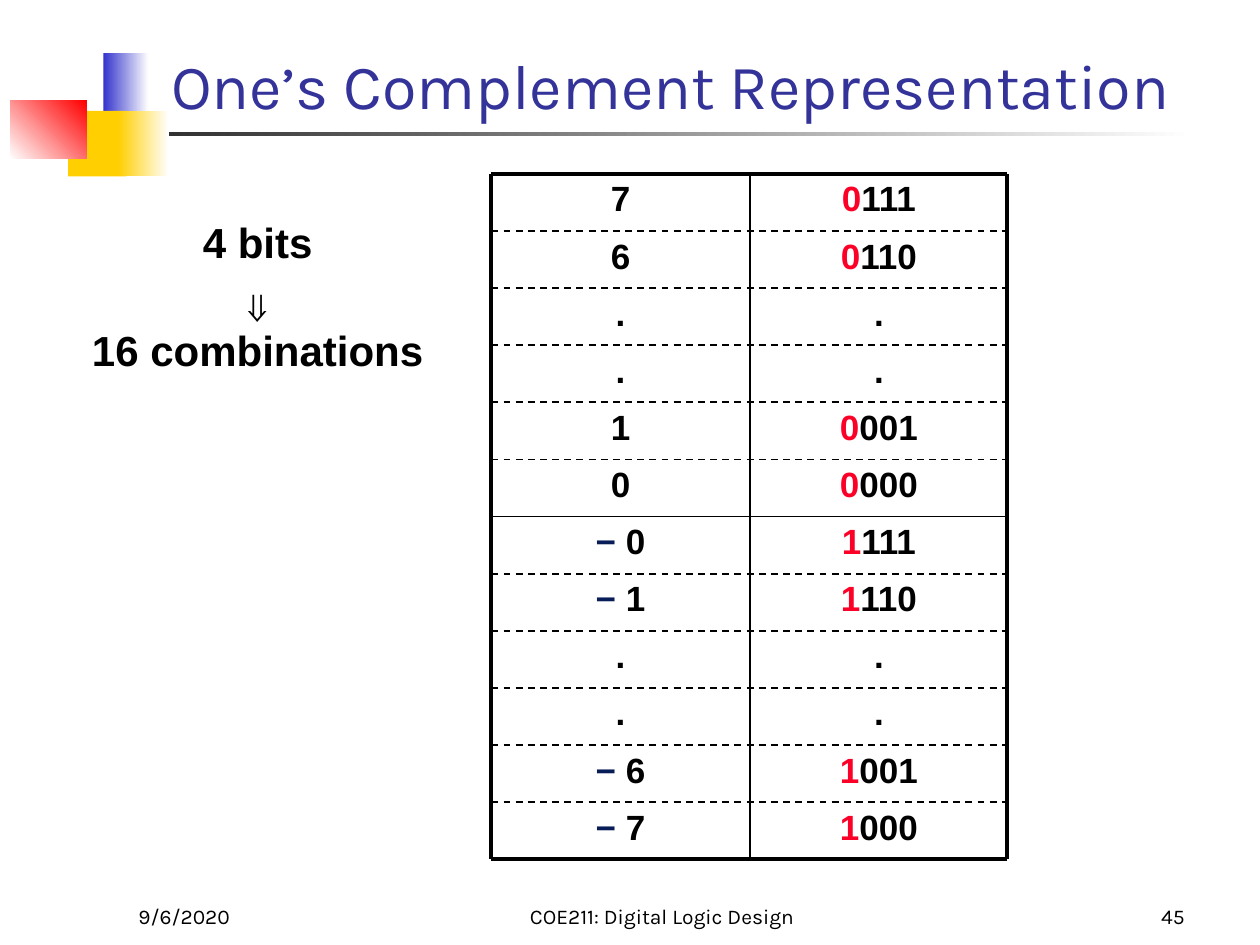
from dataclasses import dataclass

from lxml import etree
from pptx import Presentation
from pptx import util as u
from pptx.dml.color import RGBColor
from pptx.enum import dml, shapes, text
from pptx.oxml.ns import qn


@dataclass(frozen=True)
class Theme:
    heading: str = "Karla"
    body: str = "Arial"
    title_size: int = 36
    note_size: int = 24
    cell_size: int = 20
    footer_size: int = 12
    title: str = "333399"
    black: str = "000000"
    sign_bit: str = "FC0128"
    minus: str = "081D58"
    charcoal: str = "1C1C1C"
    blue: str = "3333CC"
    yellow: str = "FFCF01"
    red: str = "FF0000"
    white: str = "FFFFFF"


theme = Theme()
left, center, right = text.PP_ALIGN.LEFT, text.PP_ALIGN.CENTER, text.PP_ALIGN.RIGHT


def add_run(paragraph, words, font, size, color, bold=False):
    run = paragraph.add_run()
    run.text = words
    run.font.name = font
    run.font.size = u.Pt(size)
    run.font.bold = bold
    run.font.color.rgb = RGBColor.from_string(color)


def add_frame(slide, box, anchor):
    frame = slide.shapes.add_textbox(*map(u.Inches, box)).text_frame
    frame.word_wrap = True
    frame.vertical_anchor = anchor
    return frame


presentation = Presentation()
presentation.slide_width = u.Inches(10)
presentation.slide_height = u.Inches(7.5)
slide = presentation.slides.add_slide(presentation.slide_layouts[6])

decorations = [
    ((0.48, 1.05, 9, 0.03), theme.charcoal, theme.white, 0),
    ((0.82, 0.42, 0.36, 0.52), theme.blue, theme.white, 0),
    ((0.54, 0.88, 0.46, 0.52), theme.yellow, theme.yellow, 0),
    ((0.94, 0.88, 0.4, 0.52), theme.yellow, theme.white, 0),
    ((0.08, 0.8, 0.61, 0.46), theme.white, theme.red, 45),
]
for box, start, end, angle in decorations:
    shape = slide.shapes.add_shape(shapes.MSO_SHAPE.RECTANGLE, *map(u.Inches, box))
    shape.shadow.inherit = False
    shape.line.fill.background()
    if start == end:
        shape.fill.solid()
        shape.fill.fore_color.rgb = RGBColor.from_string(start)
    else:
        shape.fill.gradient()
        shape.fill.gradient_angle = angle
        for stop, color in zip(shape.fill.gradient_stops, (start, end)):
            stop.color.rgb = RGBColor.from_string(color)

labels = [
    ((1.26, 0.08, 8.52, 0.94), "One’s Complement Representation", left, theme.title_size, theme.title),
    ((1, 6.92, 2.08, 0.5), "9/6/2020", left, theme.footer_size, theme.black),
    ((3.67, 6.92, 3.17, 0.5), "COE211: Digital Logic Design", center, theme.footer_size, theme.black),
    ((7.42, 6.92, 2.08, 0.5), "45", right, theme.footer_size, theme.black),
]
for box, words, alignment, size, color in labels:
    paragraph = add_frame(slide, box, text.MSO_ANCHOR.BOTTOM).paragraphs[0]
    paragraph.alignment = alignment
    add_run(paragraph, words, theme.heading, size, color)

rows = [
    ("7", "0111"), ("6", "0110"), (".", "."), (".", "."), ("1", "0001"), ("0", "0000"),
    ("− 0", "1111"), ("− 1", "1110"), (".", "."), (".", "."), ("− 6", "1001"), ("− 7", "1000"),
]
grid_left, grid_middle, grid_right = 3.9, 5.95, 7.99
grid_top, grid_bottom = 1.38, 6.82
column_width = grid_middle - grid_left
row_height = (grid_bottom - grid_top) / len(rows)
sign_change = 6

for row, values in enumerate(rows):
    for column, value in enumerate(values):
        box = (grid_left + column * column_width, grid_top + row * row_height, column_width, row_height)
        paragraph = add_frame(slide, box, text.MSO_ANCHOR.MIDDLE).paragraphs[0]
        paragraph.alignment = center
        paragraph.line_spacing = 0.75
        lead = 1 if len(value) > 1 else 0
        if lead:
            color = theme.minus if column == 0 else theme.sign_bit
            add_run(paragraph, value[:lead], theme.body, theme.cell_size, color, True)
        add_run(paragraph, value[lead:], theme.body, theme.cell_size, theme.black, True)

rules = []
for edge in range(len(rows) + 1):
    y = grid_top + edge * row_height
    outer = edge in (0, len(rows))
    rules.append(((grid_left, y, grid_right, y), outer, not outer and edge != sign_change))
for x in (grid_left, grid_middle, grid_right):
    rules.append(((x, grid_top, x, grid_bottom), x != grid_middle, False))
for ends, thick, dashed in rules:
    connector = slide.shapes.add_connector(shapes.MSO_CONNECTOR.STRAIGHT, *map(u.Inches, ends))
    connector.line.width = u.Pt(2.25 if thick else 1)
    connector.line.color.rgb = RGBColor.from_string(theme.black)
    if dashed:
        connector.line.dash_style = dml.MSO_LINE.DASH
    etree.SubElement(connector._element.spPr, qn("a:effectLst"))

frame = add_frame(slide, (0.59, 1.77, 2.91, 1.24), text.MSO_ANCHOR.TOP)
frame.margin_left = frame.margin_right = frame.margin_top = frame.margin_bottom = 0
for index, lines in enumerate((["4 bits"], ["⇓", "16 combinations"])):
    paragraph = frame.add_paragraph() if index else frame.paragraphs[0]
    paragraph.alignment = center
    paragraph.line_spacing = 0.87
    if index:
        paragraph.space_before = u.Pt(12)
    for position, words in enumerate(lines):
        if position:
            paragraph.add_line_break()
        add_run(paragraph, words, theme.body, theme.note_size, theme.black, True)

presentation.save("out.pptx")
